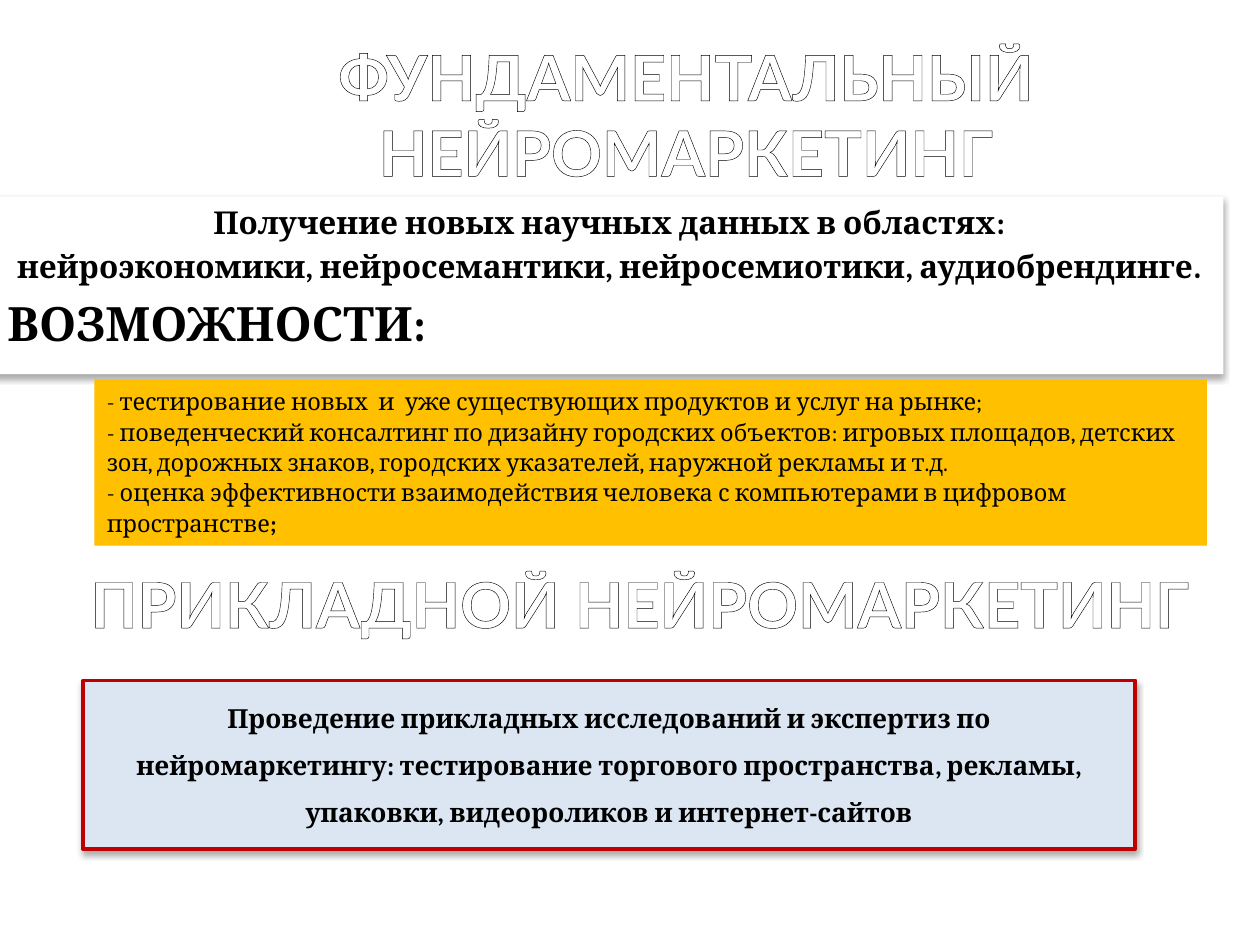
from dataclasses import dataclass
from typing import Optional

import lxml.etree
import pptx
import pptx.dml.color
import pptx.enum.shapes
import pptx.enum.text
import pptx.oxml
import pptx.oxml.ns
import pptx.util

ALIGN = pptx.enum.text.PP_ALIGN
ANCHOR = pptx.enum.text.MSO_ANCHOR
COLUMNS, ROWS = 100, 75
BLACK, WHITE = "000000", "FFFFFF"

presentation = pptx.Presentation()
presentation.slide_width = pptx.util.Inches(10)
presentation.slide_height = pptx.util.Inches(7.5)
slide = presentation.slides.add_slide(presentation.slide_layouts[6])


@dataclass
class Line:
    text: str
    size: float
    font: str = "Cambria"
    color: str = BLACK
    bold: bool = True
    outline: float = 0.25
    align: ALIGN = ALIGN.CENTER
    spacing: float = 1.0
    bold_tail: str = ""


@dataclass
class Panel:
    """A text block placed in grid columns and rows."""
    column: float
    row: float
    columns: float
    rows: float
    lines: list[Line]
    fill: Optional[str] = None
    border: Optional[str] = None
    shadow: bool = False
    anchor: ANCHOR = ANCHOR.TOP


def rgb(color: str) -> pptx.dml.color.RGBColor:
    return pptx.dml.color.RGBColor.from_string(color)


def add_outline(run, points: float) -> None:
    """Draw a black contour around the letters."""
    outline = pptx.oxml.parse_xml(
        f'<a:ln {pptx.oxml.ns.nsdecls("a")} w="{int(pptx.util.Pt(points))}">'
        f'<a:solidFill><a:srgbClr val="{BLACK}"/></a:solidFill></a:ln>')
    run.font._element.insert(0, outline)


def add_shadow(shape) -> None:
    """Fill the shape's empty effect list with a soft shadow below it."""
    effects = shape._element.spPr.find(pptx.oxml.ns.qn("a:effectLst"))
    shadow = lxml.etree.SubElement(
        effects, pptx.oxml.ns.qn("a:outerShdw"),
        blurRad=str(int(pptx.util.Pt(3.5))), dist=str(int(pptx.util.Pt(2.2))),
        dir="5400000", rotWithShape="0")
    color = lxml.etree.SubElement(shadow, pptx.oxml.ns.qn("a:srgbClr"), val=BLACK)
    lxml.etree.SubElement(color, pptx.oxml.ns.qn("a:alpha"), val="32000")


def write_line(paragraph, line: Line, first: bool) -> None:
    paragraph.text = line.text
    paragraph.alignment = line.align
    paragraph.line_spacing = line.spacing
    if line.bold and not first:
        paragraph.space_before = pptx.util.Pt(line.size * 0.2)
    if line.bold_tail:
        paragraph.add_run().text = line.bold_tail
    for index, run in enumerate(paragraph.runs):
        run.font.name = line.font
        run.font.size = pptx.util.Pt(line.size)
        run.font.bold = line.bold or index > 0
        run.font.color.rgb = rgb(line.color)
        if line.outline:
            add_outline(run, line.outline)


def draw_panel(panel: Panel) -> None:
    column_width = presentation.slide_width / COLUMNS
    row_height = presentation.slide_height / ROWS
    place = [int(panel.column * column_width), int(panel.row * row_height),
             int(panel.columns * column_width), int(panel.rows * row_height)]
    if panel.fill:
        shape = slide.shapes.add_shape(
            pptx.enum.shapes.MSO_SHAPE.RECTANGLE, *place)
        shape.shadow.inherit = False
        shape.fill.solid()
        shape.fill.fore_color.rgb = rgb(panel.fill)
        if panel.border:
            shape.line.color.rgb = rgb(panel.border)
            shape.line.width = pptx.util.Pt(2)
        else:
            shape.line.fill.background()
    else:
        shape = slide.shapes.add_textbox(*place)
    if panel.shadow:
        add_shadow(shape)

    frame = shape.text_frame
    frame.word_wrap = True
    frame.vertical_anchor = panel.anchor
    for index, line in enumerate(panel.lines):
        paragraph = frame.add_paragraph() if index else frame.paragraphs[0]
        write_line(paragraph, line, first=index == 0)


def heading(text: str) -> list[Line]:
    return [Line(text, 36, font="Lato", color=WHITE, outline=1.45)]


def option(text: str, bold_tail: str = "") -> Line:
    return Line(text, 13.5, bold=False, outline=0, align=ALIGN.LEFT,
                spacing=1.07, bold_tail=bold_tail)


PANELS = [
    # Fundamental neuromarketing: heading, goals, options
    Panel(10.6, 2.9, 87.7, 12.2, heading("ФУНДАМЕНТАЛЬНЫЙ НЕЙРОМАРКЕТИНГ"),
          anchor=ANCHOR.MIDDLE),
    Panel(-0.4, 15.6, 97.5, 14.1, [
        Line("Получение новых научных данных в областях:", 18),
        Line("нейроэкономики, нейросемантики, нейросемиотики, аудиобрендинге.", 18),
        Line("ВОЗМОЖНОСТИ:", 27, align=ALIGN.JUSTIFY),
    ], fill=WHITE, shadow=True),
    Panel(7.5, 30.1, 88.3, 13.2, [
        option("- тестирование новых  и  уже существующих продуктов и услуг на рынке;"),
        option("- поведенческий консалтинг по дизайну городских объектов: игровых "
               "площадов, детских зон, дорожных знаков, городских указателей, "
               "наружной рекламы и т.д."),
        option("- оценка эффективности взаимодействия человека с компьютерами "
               "в цифровом пространстве", bold_tail=";"),
    ], fill="FFC000"),
    # Applied neuromarketing: heading, goals
    Panel(5.8, 44, 90, 7.7, heading("ПРИКЛАДНОЙ НЕЙРОМАРКЕТИНГ"),
          anchor=ANCHOR.MIDDLE),
    Panel(6.6, 54, 83.5, 13.4, [
        Line("Проведение прикладных исследований и экспертиз по нейромаркетингу: "
             "тестирование торгового пространства, рекламы, упаковки, "
             "видеороликов и интернет-сайтов", 15, spacing=1.5),
    ], fill="DCE6F2", border="C00000", shadow=True),
]

for panel in PANELS:
    draw_panel(panel)

presentation.save("out.pptx")
